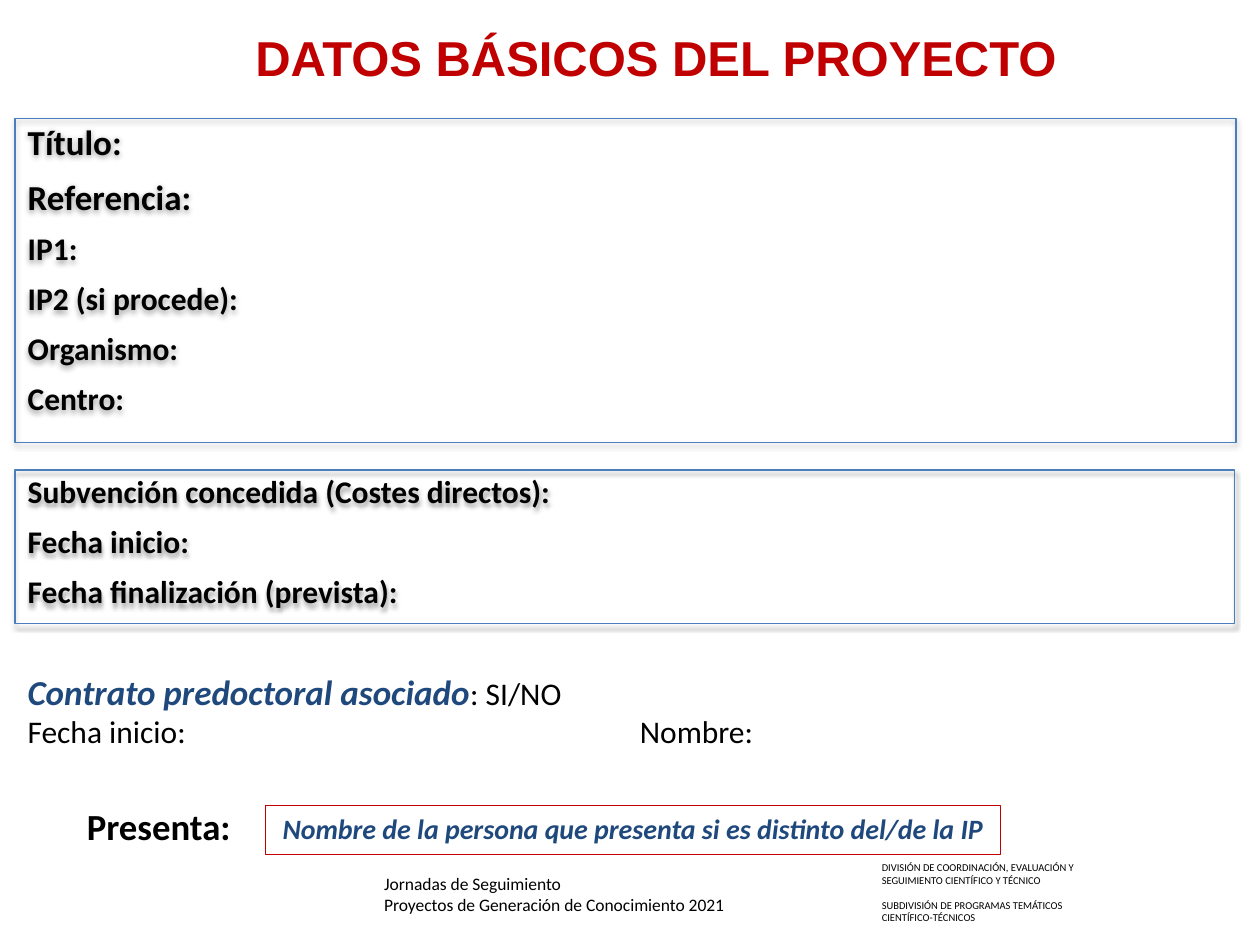
from lxml import etree
from pptx import Presentation
from pptx.dml.color import RGBColor
from pptx.enum.shapes import MSO_SHAPE
from pptx.enum.text import MSO_ANCHOR, MSO_AUTO_SIZE, PP_ALIGN
from pptx.oxml.ns import qn
from pptx.util import Inches, Pt

RECTANGLE = MSO_SHAPE.RECTANGLE
TOP, MIDDLE = MSO_ANCHOR.TOP, MSO_ANCHOR.MIDDLE
LEFT, CENTER = PP_ALIGN.LEFT, PP_ALIGN.CENTER
NO_AUTOFIT = MSO_AUTO_SIZE.NONE
TWO_CONTENT = 3

BLACK, RED, NAVY, BLUE = "000000", "C00000", "1F497D", "4B7EBC"

PROJECT_FIELDS = [("Título:", 20), ("Referencia:", 20), ("IP1:", 18),
                  ("IP2 (si procede):", 18), ("Organismo:", 18), ("Centro:", 18)]
GRANT_FIELDS = [("Subvención concedida (Costes directos):", 18),
                ("Fecha inicio:", 18), ("Fecha finalización (prevista):", 18)]


def color(hex_value):
    return RGBColor.from_string(hex_value)


def place(shape, left, top, width, height):
    shape.left, shape.top = Inches(left), Inches(top)
    shape.width, shape.height = Inches(width), Inches(height)


def prepare_frame(shape, anchor=TOP):
    frame = shape.text_frame
    frame.word_wrap = True
    frame.auto_size = NO_AUTOFIT
    frame.vertical_anchor = anchor
    return frame


def add_run(paragraph, text, size, hex_value=BLACK, bold=False, italic=False,
            font="Calibri"):
    run = paragraph.add_run()
    run.text = text
    run.font.name, run.font.size = font, Pt(size)
    run.font.bold, run.font.italic = bold, italic
    run.font.color.rgb = color(hex_value)


def add_textbox(slide, box, anchor=TOP):
    return prepare_frame(slide.shapes.add_textbox(*map(Inches, box)), anchor)


def outline(shape, hex_value):
    shape.fill.background()
    shape.line.color.rgb = color(hex_value)
    shape.line.width = Pt(0.75)
    shape.shadow.inherit = False


def add_soft_shadow(shape):
    effects = shape.element.spPr.find(qn("a:effectLst"))
    shadow = etree.SubElement(effects, qn("a:outerShdw"), blurRad=str(Pt(3.1)),
                              dist=str(Pt(1.6)), dir="5400000", rotWithShape="0")
    tint = etree.SubElement(shadow, qn("a:srgbClr"), val=BLACK)
    etree.SubElement(tint, qn("a:alpha"), val="38000")


def remove_bullet(paragraph):
    properties = paragraph._p.get_or_add_pPr()
    properties.set("marL", "0")
    properties.set("indent", "0")
    etree.SubElement(properties, qn("a:buNone"))


def add_tab_stop(paragraph, position):
    stops = etree.SubElement(paragraph._p.get_or_add_pPr(), qn("a:tabLst"))
    etree.SubElement(stops, qn("a:tab"), pos=str(Inches(position)), algn="l")


def fill_title(title):
    place(title, 1.77, 0.17, 6.87, 0.57)
    paragraph = prepare_frame(title, MIDDLE).paragraphs[0]
    paragraph.alignment = CENTER
    add_run(paragraph, "DATOS BÁSICOS DEL PROYECTO", 28, RED, bold=True, font="Arial")


def fill_field_panel(panel, box, fields):
    """Outlined, shadowed list of form labels, spaced by half their size."""
    place(panel, *box)
    outline(panel, BLUE)
    add_soft_shadow(panel)
    frame = prepare_frame(panel)
    for index, (label, size) in enumerate(fields):
        paragraph = frame.add_paragraph() if index else frame.paragraphs[0]
        remove_bullet(paragraph)
        paragraph.line_spacing = 0.9
        paragraph.space_before = Pt(size / 2 if index else 0)
        add_run(paragraph, label, size, bold=True)


def add_contract(slide):
    frame = add_textbox(slide, (0.12, 5.27, 9.68, 0.74))
    heading = frame.paragraphs[0]
    add_run(heading, "Contrato predoctoral asociado", 20, NAVY, bold=True, italic=True)
    add_run(heading, ": SI/NO", 18)
    details = frame.add_paragraph()
    add_tab_stop(details, 4.86)
    add_run(details, "Fecha inicio:\tNombre:", 18)


def add_presenter(slide):
    label = add_textbox(slide, (0.59, 6.33, 1.55, 0.45))
    add_run(label.paragraphs[0], "Presenta:", 21, bold=True)
    name_box = slide.shapes.add_shape(
        RECTANGLE, *map(Inches, (2.11, 6.39, 5.83, 0.39)))
    outline(name_box, RED)
    paragraph = prepare_frame(name_box).paragraphs[0]
    paragraph.alignment = CENTER
    add_run(paragraph, "Nombre de la persona que presenta si es distinto del/de la IP",
            16, NAVY, bold=True, italic=True)


def add_footer(slide, box, lines, size, gap=0, anchor=TOP):
    frame = add_textbox(slide, box, anchor)
    for index, line in enumerate(lines):
        paragraph = frame.add_paragraph() if index else frame.paragraphs[0]
        paragraph.alignment = LEFT
        paragraph.space_before = Pt(gap if index else 0)
        add_run(paragraph, line, size)


def main():
    deck = Presentation()
    deck.slide_width, deck.slide_height = Inches(10), Inches(7.5)
    slide = deck.slides.add_slide(deck.slide_layouts[TWO_CONTENT])
    title, project, grant = slide.placeholders

    fill_title(title)
    fill_field_panel(project, (0.12, 0.94, 9.69, 2.57), PROJECT_FIELDS)
    fill_field_panel(grant, (0.12, 3.73, 9.68, 1.22), GRANT_FIELDS)
    add_contract(slide)
    add_presenter(slide)
    add_footer(slide, (2.95, 6.88, 3.53, 0.44),
               ["Jornadas de Seguimiento",
                "Proyectos de Generación de Conocimiento 2021"], 10)
    add_footer(slide, (6.9, 6.78, 1.74, 0.61),
               ["DIVISIÓN DE COORDINACIÓN, EVALUACIÓN Y SEGUIMIENTO CIENTÍFICO Y TÉCNICO",
                "SUBDIVISIÓN DE PROGRAMAS TEMÁTICOS CIENTÍFICO-TÉCNICOS"],
               6, gap=7, anchor=MIDDLE)
    deck.save("out.pptx")


if __name__ == "__main__":
    main()
